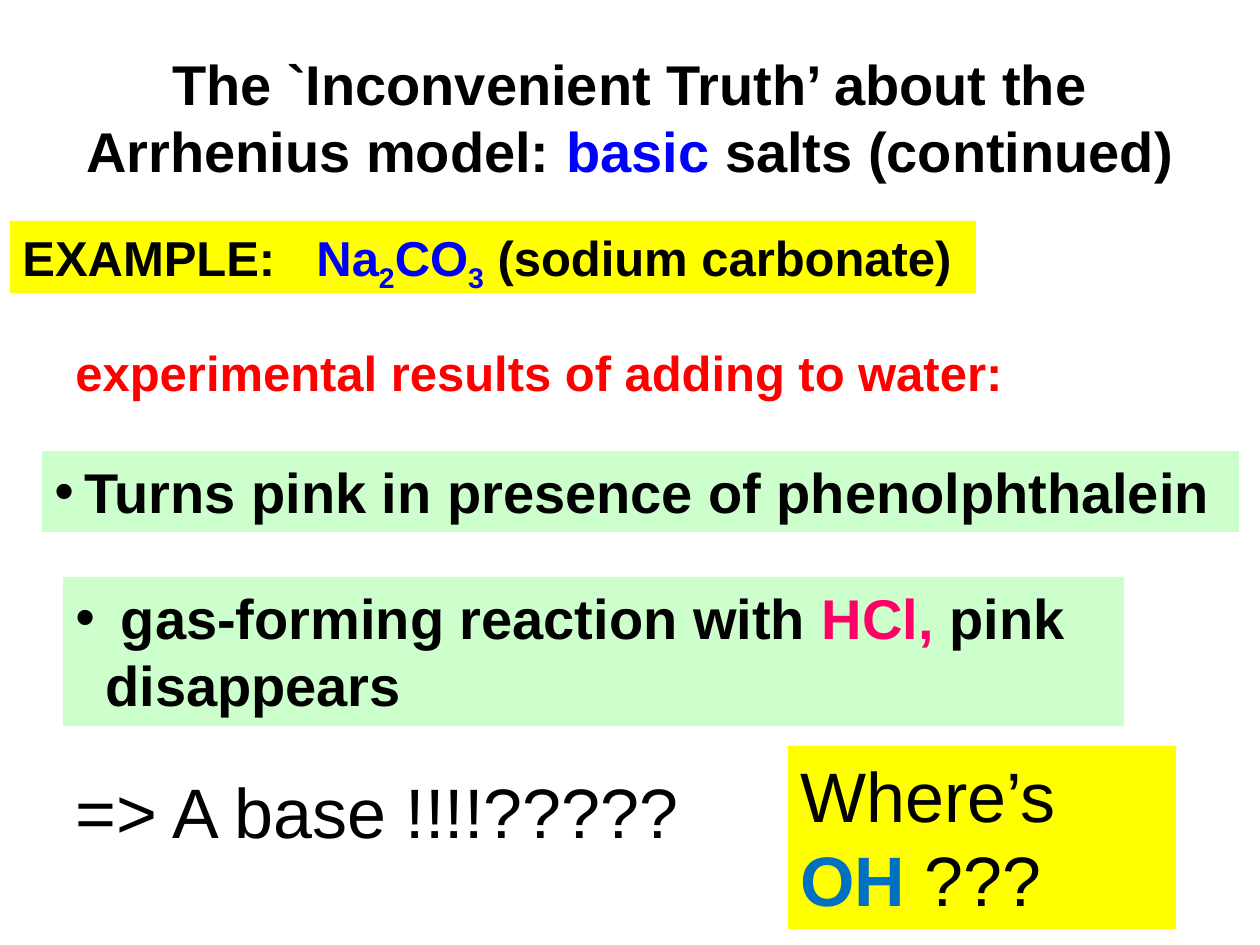
from pptx import Presentation
from pptx.dml.color import RGBColor
from pptx.enum.shapes import MSO_SHAPE
from pptx.enum.text import MSO_ANCHOR, MSO_AUTO_SIZE, PP_ALIGN
from lxml import etree

RECTANGLE = MSO_SHAPE.RECTANGLE
LEFT, CENTER = PP_ALIGN.LEFT, PP_ALIGN.CENTER
TOP, MIDDLE = MSO_ANCHOR.TOP, MSO_ANCHOR.MIDDLE
NO_FIT, GROW = MSO_AUTO_SIZE.NONE, MSO_AUTO_SIZE.SHAPE_TO_FIT_TEXT

PX = 914400 / 126
POINT = 12700
A = "{http://schemas.openxmlformats.org/drawingml/2006/main}"
HANG = 30       # bullet indent, px
FORMULA = 294   # tab stop where the formula starts, px

THEME = {
    "font": "Arial",
    "size": {"heading": 32, "body": 28, "question": 40},
    "color": {
        "ink": "000000", "blue": "0000FF", "red": "FF0000", "pink": "FF0066",
        "teal": "0070C0", "mint": "CCFFCC", "yellow": "FFFF00",
    },
}

# Content: each run is (text, colour, style), style being "b" bold, "s" subscript
TITLE = {
    "box": (63, 38, 1134, 158), "size": "heading",
    "runs": [("The `Inconvenient Truth’ about the Arrhenius model: ", "ink", "b"),
             ("basic ", "blue", "b"), ("salts (continued)", "ink", "b")],
}
STATEMENTS = [
    {"box": (42, 451, 1197, 81), "size": "heading", "fill": "mint", "bullet": True,
     "runs": [("Turns pink in presence of phenolphthalein", "ink", "b")]},
    {"box": (63, 577, 1061, 149), "size": "heading", "fill": "mint", "bullet": True,
     "runs": [(" gas-forming reaction with ", "ink", "b"), ("HCl,", "pink", "b"),
              (" pink disappears", "ink", "b")]},
    {"box": (63, 336, 1113, 72), "size": "body",
     "runs": [("experimental results of adding to water:", "red", "b")]},
    {"box": (10, 221, 966, 72), "size": "body", "fill": "yellow", "tab": FORMULA,
     "runs": [("EXAMPLE:\t", "ink", "b"), ("Na", "blue", "b"), ("2", "blue", "bs"),
              ("CO", "blue", "b"), ("3", "blue", "bs"),
              (" (sodium carbonate)", "ink", "b")]},
    {"box": (63, 762, 714, 97), "size": "question",
     "runs": [("=> A base !!!!?????", "ink", "")]},
    {"box": (788, 746, 388, 183), "size": "question", "fill": "yellow",
     "runs": [("Where’s ", "ink", ""), ("OH", "teal", "b"), (" ???", "ink", "")]},
]


def emu(px):
    return round(px * PX)


def color(name):
    return RGBColor.from_string(THEME["color"][name])


def write(holder, part, align, anchor, fit):
    frame = holder.text_frame
    frame.word_wrap = True
    frame.auto_size = fit
    frame.vertical_anchor = anchor
    paragraph = frame.paragraphs[0]
    paragraph.alignment = align
    for text, ink, style in part["runs"]:
        run = paragraph.add_run()
        run.text = text
        run.font.name = THEME["font"]
        run.font.size = THEME["size"][part["size"]] * POINT
        run.font.bold = "b" in style
        run.font.color.rgb = color(ink)
        if "s" in style:
            run.font._element.set("baseline", "-25000")
    return paragraph


def add_bullet(paragraph):
    properties = paragraph._p.get_or_add_pPr()
    properties.set("marL", str(emu(HANG)))
    properties.set("indent", str(-emu(HANG)))
    etree.SubElement(properties, A + "buFont", typeface=THEME["font"])
    etree.SubElement(properties, A + "buChar", char="•")


def add_tab_stop(paragraph, px):
    stops = etree.SubElement(paragraph._p.get_or_add_pPr(), A + "tabLst")
    etree.SubElement(stops, A + "tab", pos=str(emu(px)), algn="l")


def add_statement(slide, part):
    box = [emu(px) for px in part["box"]]
    if "fill" in part:
        holder = slide.shapes.add_shape(RECTANGLE, *box)
        holder.shadow.inherit = False
        holder.fill.solid()
        holder.fill.fore_color.rgb = color(part["fill"])
        holder.line.fill.background()
    else:
        holder = slide.shapes.add_textbox(*box)
    paragraph = write(holder, part, LEFT, TOP, GROW)
    if part.get("bullet"):
        add_bullet(paragraph)
    if "tab" in part:
        add_tab_stop(paragraph, part["tab"])


def main():
    deck = Presentation()
    deck.slide_width, deck.slide_height = emu(1260), emu(945)
    slide = deck.slides.add_slide(deck.slide_layouts.get_by_name("Title Only"))

    # Title
    title = slide.shapes.title
    title.left, title.top, title.width, title.height = map(emu, TITLE["box"])
    write(title, TITLE, CENTER, MIDDLE, NO_FIT)

    # Example, results and questions
    for part in STATEMENTS:
        add_statement(slide, part)

    deck.save("out.pptx")


if __name__ == "__main__":
    main()
